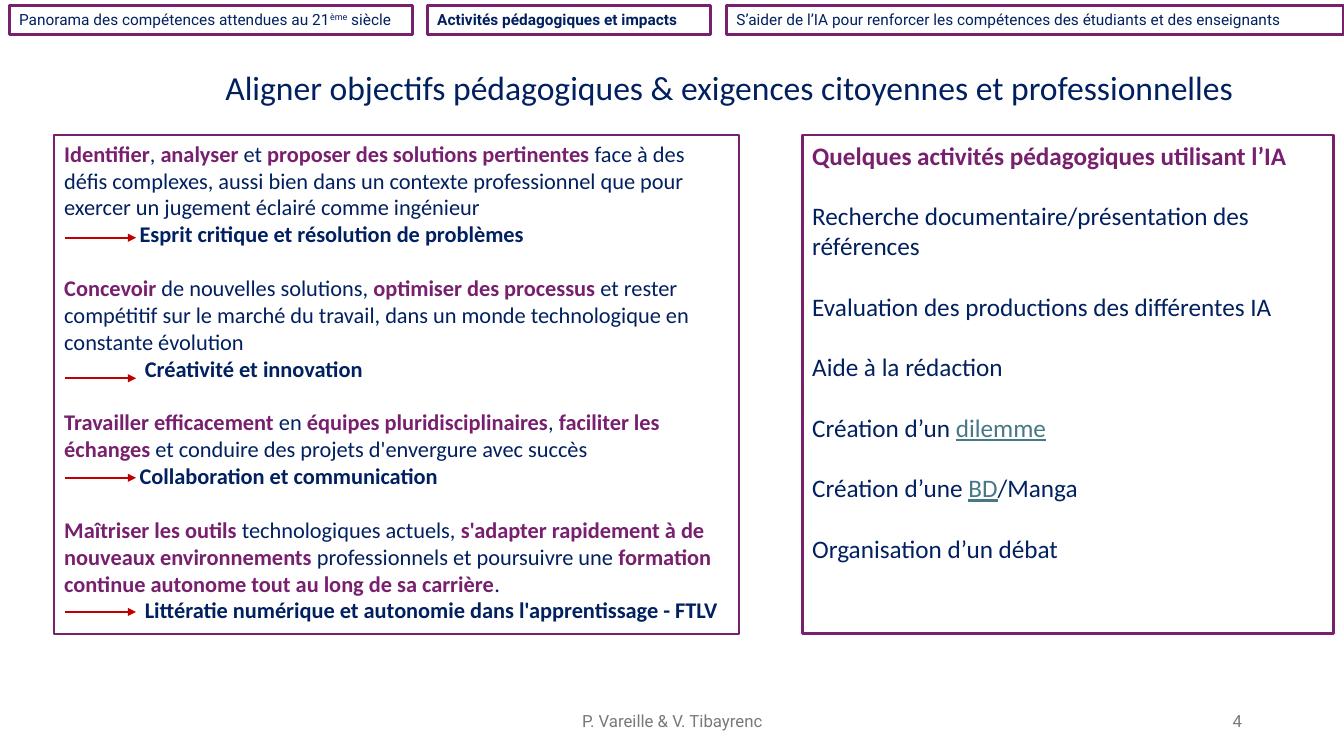
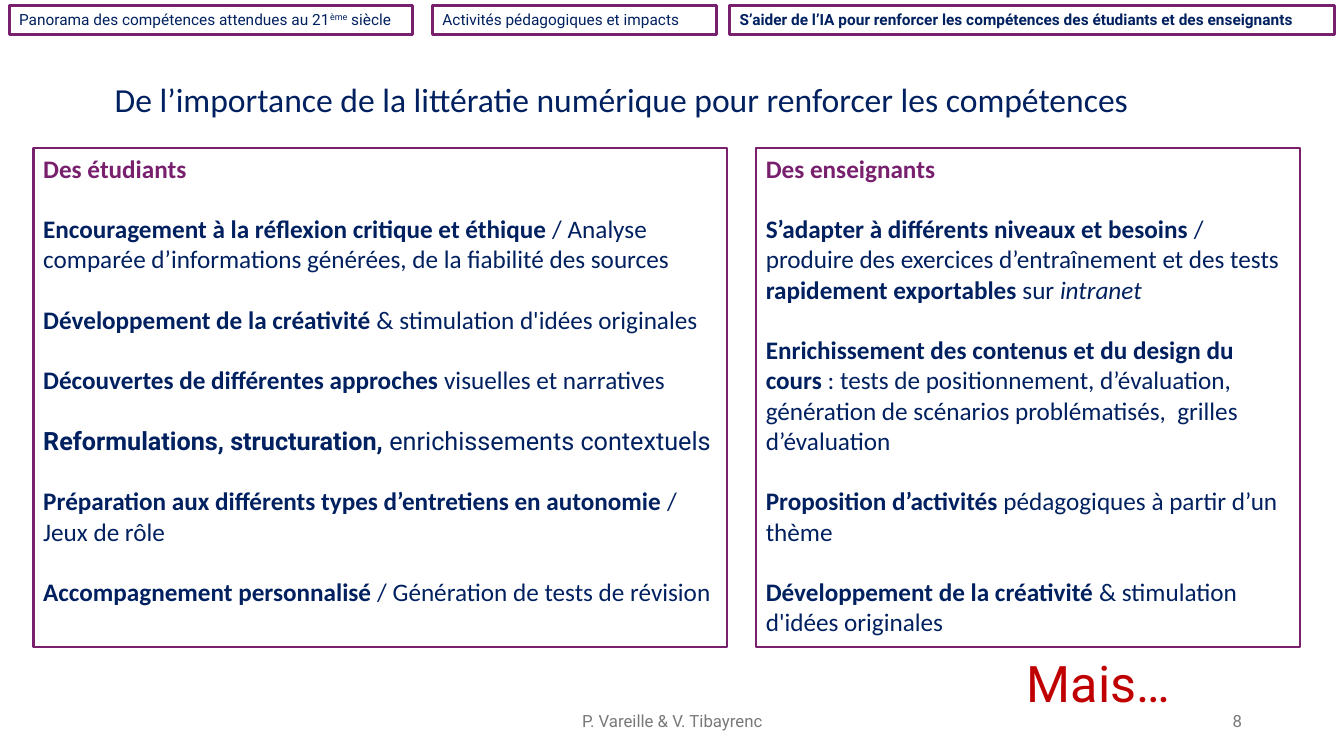
import pptx
import pptx.util
import pptx.dml.color
import pptx.enum.shapes
import pptx.enum.text
import pptx.oxml
import pptx.oxml.ns

Cm, Pt = pptx.util.Cm, pptx.util.Pt
ALIGN = pptx.enum.text.PP_ALIGN
ANCHOR = pptx.enum.text.MSO_ANCHOR

NAVY, PLUM, RED, GREY, TEAL = "002060", "78206E", "C00000", "797979", "467886"
BODY, LABEL = "Calibri", "Roboto"

# Run styles: colour and font attributes
STYLES = {
    "plain": (NAVY, {}),
    "bold": (NAVY, {"bold": True}),
    "key": (PLUM, {"bold": True}),
    "italic": (NAVY, {"italic": True}),
    "link": (TEAL, {"underline": True}),
    "super": (NAVY, {}),
    "grey": (GREY, {}),
    "red": (RED, {}),
}


def color(hex_string):
    return pptx.dml.color.RGBColor.from_string(hex_string)


class Deck:
    def __init__(self):
        self.prs = pptx.Presentation()
        self.prs.slide_width, self.prs.slide_height = Cm(33.87), Cm(19.05)
        self.s = None

    def new_slide(self, title, title_x, title_y, number, active, tabs):
        """Start a slide with its title, navigation tabs and footer."""
        self.s = self.prs.slides.add_slide(self.prs.slide_layouts[6])
        self.text((title_x, title_y, 28.4, 1.4), [(title, "plain")], 24,
                  anchor=ANCHOR.MIDDLE)
        for i, (label, (x, w)) in enumerate(zip(TAB_LABELS, tabs)):
            style = "bold" if i == active else "plain"
            runs = [(t, st or style) for t, st in label]
            self.panel((x, 0.13, w, 0.74), [(runs, 0, 0)], 11, 2.25, LABEL)
        for x, w, t, align in ((11.23, 11.43, "P. Vareille & V. Tibayrenc", ALIGN.CENTER),
                               (23.93, 7.62, str(number), ALIGN.RIGHT)):
            self.text((x, 17.65, w, 1.02), [(t, "grey")], 12, LABEL, align, ANCHOR.MIDDLE)

    def runs(self, p, runs, size, font):
        """Add (text, style[, font]) runs to a paragraph."""
        for t, style, *own_font in runs:
            r = p.add_run()
            r.text = t
            r.font.name = own_font[0] if own_font else font
            r.font.size = Pt(size)
            hex_string, attributes = STYLES[style]
            r.font.color.rgb = color(hex_string)
            for name, value in attributes.items():
                setattr(r.font, name, value)
            if style == "super":
                r._r.get_or_add_rPr().set("baseline", "30000")

    def text(self, box, runs, size, font=BODY, align=ALIGN.LEFT, anchor=ANCHOR.TOP):
        tf = self.s.shapes.add_textbox(*map(Cm, box)).text_frame
        tf.word_wrap, tf.vertical_anchor = True, anchor
        p = tf.paragraphs[0]
        p.alignment = align
        self.runs(p, runs, size, font)

    def panel(self, box, paragraphs, size, line, font=BODY):
        """Outlined box; a paragraph is (runs, gap in lines, indent in cm)."""
        sp = self.s.shapes.add_shape(pptx.enum.shapes.MSO_SHAPE.RECTANGLE, *map(Cm, box))
        sp.shadow.inherit = False
        sp.fill.background()
        sp.line.color.rgb, sp.line.width = color(PLUM), Pt(line)
        tf = sp.text_frame
        tf.word_wrap, tf.vertical_anchor = True, ANCHOR.TOP
        for i, (runs, gap, indent) in enumerate(paragraphs):
            p = tf.add_paragraph() if i else tf.paragraphs[0]
            p.alignment = ALIGN.LEFT
            p.space_before = Pt(gap * size * 1.2)
            if indent:
                p._p.get_or_add_pPr().set("marL", str(Cm(indent)))
            self.runs(p, runs, size, font)

    def topics(self, box, heading, items, line):
        """Panel with a heading and items one blank line apart."""
        self.panel(box, [([(heading, "key")], 0, 0)] + [(runs, 1, 0) for runs in items],
                   18, line)

    def arrow(self, x1, x2, y):
        c = self.s.shapes.add_connector(pptx.enum.shapes.MSO_CONNECTOR.STRAIGHT,
                                        Cm(x1), Cm(y), Cm(x2), Cm(y))
        c.line.color.rgb, c.line.width = color(RED), Pt(1.5)
        pptx.oxml.ns.qn("a:tailEnd")
        ln = c.line._get_or_add_ln()
        ln.append(ln.makeelement(pptx.oxml.ns.qn("a:tailEnd"), {"type": "triangle"}))
        sp_pr = c._element.spPr
        sp_pr.append(sp_pr.makeelement(pptx.oxml.ns.qn("a:effectLst"), {}))


TAB_LABELS = [
    [("Panorama des compétences attendues au 21", None), ("ème", "super"), (" siècle", None)],
    [("Activités pédagogiques et impacts", None)],
    [("S’aider de l’IA pour renforcer les compétences des étudiants et des enseignants", None)],
]

# Objectives: description, resulting skill, skill indent, arrow height
OBJECTIVES = [
    ([("Identifier", "key"), (", ", "plain"), ("analyser", "key"), (" et ", "plain"),
      ("proposer des solutions pertinentes ", "key"),
      ("face à des défis complexes, aussi bien dans un contexte professionnel que pour "
       "exercer un jugement éclairé comme ingénieur", "plain")],
     "Esprit critique et résolution de problèmes", 1.9, 5.99),
    ([("Concevoir ", "key"), ("de nouvelles solutions, ", "plain"),
      ("optimiser des processus ", "key"),
      ("et rester compétitif sur le marché du travail, dans un monde technologique en "
       "constante évolution", "plain")],
     "Créativité et innovation", 2.03, 9.53),
    ([("Travailler efficacement", "key"), (" en ", "plain"),
      ("équipes pluridisciplinaires", "key"), (", ", "plain"),
      ("faciliter les échanges ", "key"),
      ("et conduire des projets d'envergure avec succès", "plain")],
     "Collaboration et communication", 1.9, 12.04),
    ([("Maîtriser les outils ", "key"), ("technologiques actuels, ", "plain"),
      ("s'adapter rapidement à de nouveaux environnements ", "key"),
      ("professionnels et poursuivre une ", "plain"),
      ("formation continue autonome tout au long de sa carrière", "key"), (".", "plain")],
     "Littératie numérique et autonomie dans l'apprentissage - FTLV", 2.03, 15.42),
]

ACTIVITIES = [
    [("Recherche documentaire/présentation des références", "plain")],
    [("Evaluation des productions des différentes IA", "plain")],
    [("Aide à la rédaction", "plain")],
    [("Création d’un ", "plain"), ("dilemme", "link")],
    [("Création d’une ", "plain"), ("BD", "link"), ("/Manga", "plain")],
    [("Organisation d’un débat", "plain")],
]

CREATIVITY = [("Développement de la créativité ", "bold"),
              ("& stimulation d'idées originales", "plain")]

STUDENTS = [
    [("Encouragement à la réflexion critique et éthique ", "bold"),
     ("/ Analyse comparée d’informations générées, de la fiabilité des sources", "plain")],
    CREATIVITY,
    [("Découvertes de différentes approches ", "bold"), ("visuelles et narratives", "plain")],
    [("Reformulations, structuration, ", "bold", LABEL),
     ("enrichissements contextuels", "plain", LABEL)],
    [("Préparation aux différents types d’entretiens en autonomie ", "bold"),
     ("/ Jeux de rôle", "plain")],
    [("Accompagnement personnalisé ", "bold"),
     ("/ Génération de tests de révision", "plain")],
]

TEACHERS = [
    [("S’adapter à différents niveaux et besoins ", "bold"),
     ("/ produire des exercices d’entraînement et des tests ", "plain"),
     ("rapidement exportables", "bold"), (" sur ", "plain"), ("intranet", "italic")],
    [("Enrichissement des contenus et du design du cours ", "bold"),
     (": tests de positionnement, d’évaluation, génération de scénarios problématisés,  "
      "grilles d’évaluation", "plain")],
    [("Proposition d’activités ", "bold"),
     ("pédagogiques à partir d’un thème", "plain")],
    CREATIVITY,
]


def main():
    deck = Deck()

    # Slide 1: objectives and activities
    deck.new_slide("Aligner objectifs pédagogiques & exigences citoyennes et professionnelles",
                   5.43, 1.5, 4, 1, [(0.23, 10.16), (10.77, 7.14), (18.31, 15.54)])
    paragraphs = []
    for i, (description, skill, indent, _) in enumerate(OBJECTIVES):
        paragraphs += [(description, min(i, 1), 0), ([(skill, "bold")], 0, indent)]
    deck.panel((1.37, 3.4, 17.25, 12.57), paragraphs, 16, 1.5)
    for *_, y in OBJECTIVES:
        deck.arrow(1.65, 3.43, y)
    deck.topics((20.22, 3.4, 13.39, 12.57), "Quelques activités pédagogiques utilisant l’IA",
                ACTIVITIES, 1.75)

    # Slide 2: students and teachers
    deck.new_slide("De l’importance de la littératie numérique pour renforcer les compétences",
                   2.64, 1.8, 8, 2, [(0.23, 10.16), (10.9, 7.16), (18.39, 15.24)])
    deck.topics((19.05, 3.73, 13.72, 12.57), "Des enseignants", TEACHERS, 1.5)
    deck.topics((0.84, 3.73, 17.48, 12.57), "Des étudiants", STUDENTS, 1.75)
    deck.text((25.63, 16.31, 4.19, 1.8), [("Mais…", "red")], 36, LABEL)

    deck.prs.save("out.pptx")


if __name__ == "__main__":
    main()
